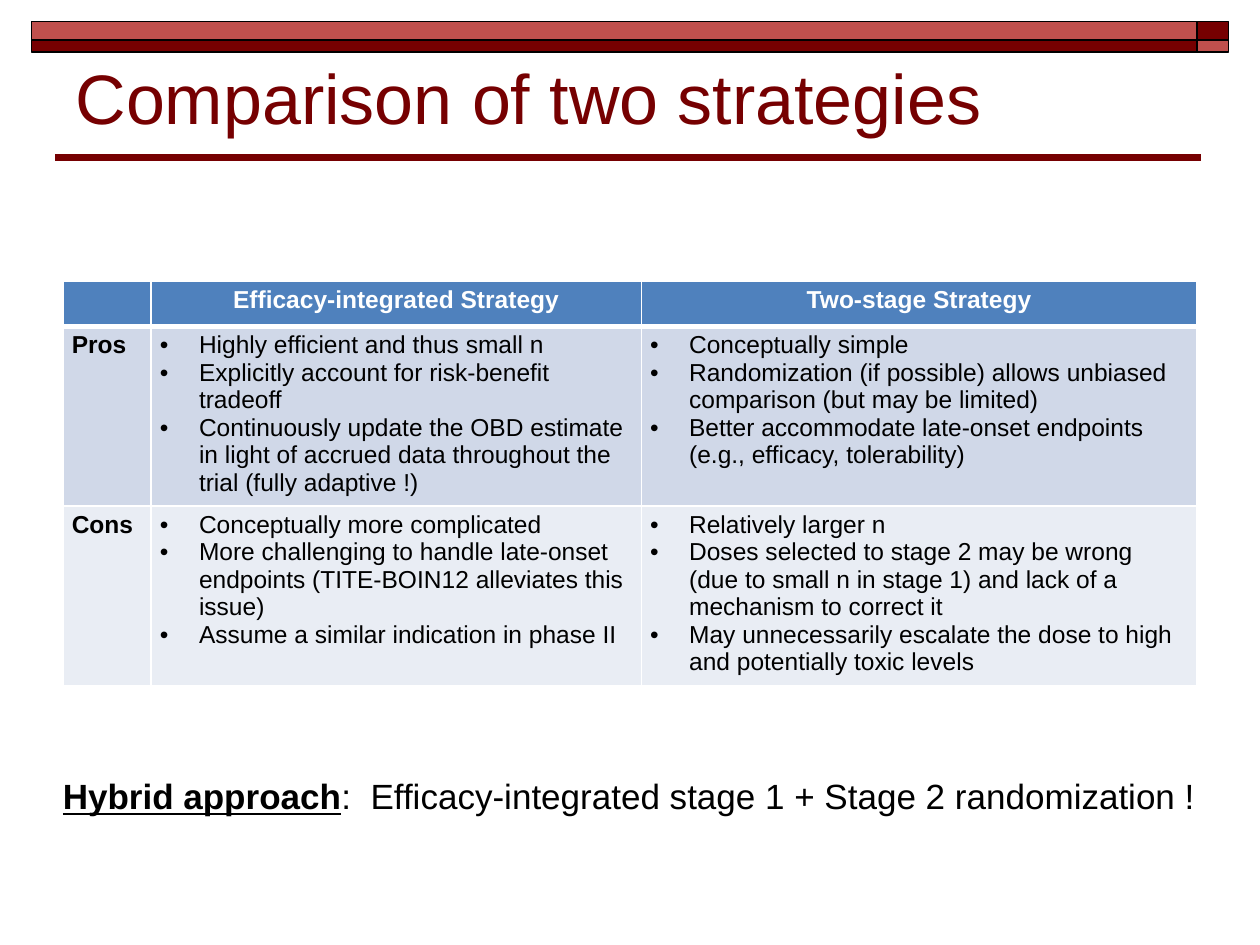
from lxml.etree import SubElement
from pptx import Presentation
from pptx.dml.color import RGBColor
from pptx.enum.shapes import MSO_CONNECTOR as Conn, MSO_SHAPE as Shape
from pptx.enum.text import MSO_ANCHOR as Anchor, PP_ALIGN as Align
from pptx.oxml.ns import qn
from pptx.util import Inches, Pt

MAROON = RGBColor(0x76, 0x00, 0x01)
RED = RGBColor(0xC0, 0x50, 0x4D)
BLUE = RGBColor(0x4F, 0x81, 0xBD)
PALE = RGBColor(0xD0, 0xD8, 0xE8)
LIGHT = RGBColor(0xE9, 0xED, 0xF4)
BLACK = RGBColor(0, 0, 0)
WHITE = RGBColor(255, 255, 255)

HEADS = ["", "Efficacy-integrated Strategy", "Two-stage Strategy"]
BODY = [
    ("Pros", PALE, [
        ["Highly efficient and thus small n",
         "Explicitly account for risk-benefit tradeoff",
         "Continuously update the OBD estimate in light of accrued data "
         "throughout the trial (fully adaptive !)"],
        ["Conceptually simple",
         "Randomization (if possible) allows unbiased comparison "
         "(but may be limited)",
         "Better accommodate late-onset endpoints "
         "(e.g., efficacy, tolerability)"],
    ]),
    ("Cons", LIGHT, [
        ["Conceptually more complicated",
         "More challenging to handle late-onset endpoints "
         "(TITE-BOIN12 alleviates this issue)",
         "Assume a similar indication in phase II"],
        ["Relatively larger n",
         "Doses selected to stage 2 may be wrong (due to small n in stage 1) "
         "and lack of a mechanism to correct it",
         "May unnecessarily escalate the dose to high and potentially "
         "toxic levels"],
    ]),
]


def add_run(para, text, size, color=BLACK, **form):
    run = para.add_run()
    run.text = text
    run.font.color.rgb = color
    for key, val in {"name": "Arial", "size": Pt(size), **form}.items():
        setattr(run.font, key, val)


def add_bullet(para):
    props = para._p.get_or_add_pPr()
    props.set("marL", str(Inches(0.31)))
    props.set("indent", str(-Inches(0.31)))
    SubElement(props, qn("a:buFont"), typeface="Arial")
    SubElement(props, qn("a:buChar"), char="•")


def add_edges(cell, top=1, base=1):
    """Draw white cell borders; they must come before the fill."""
    props = cell._tc.get_or_add_tcPr()
    for i, (side, wide) in enumerate(zip("LRTB", (1, 1, top, base))):
        line = SubElement(props, qn(f"a:ln{side}"), w=str(Pt(wide)))
        fill = SubElement(line, qn("a:solidFill"))
        SubElement(fill, qn("a:srgbClr"), val=str(WHITE))
        props.insert(i, line)


def add_banner(slide, left, top, width):
    """Two-tone checked strip with a rule below it."""
    end = 0.25
    tones = [MAROON, RED]
    rule = slide.shapes.add_connector(
        Conn.STRAIGHT, Inches(left + 0.19), Inches(top + 1.08),
        Inches(left + width - 0.22), Inches(top + 1.08))
    rule.line.color.rgb = MAROON
    rule.line.width = Pt(4.5)
    SubElement(rule._element.spPr, qn("a:effectLst"))
    for row, (down, high) in enumerate([(0, 0.15), (0.15, 0.09)]):
        for col, (over, wide) in enumerate([(0, width - end),
                                            (width - end, end)]):
            bar = slide.shapes.add_shape(
                Shape.RECTANGLE, Inches(left + over), Inches(top + down),
                Inches(wide), Inches(high))
            bar.shadow.inherit = False
            bar.fill.solid()
            bar.fill.fore_color.rgb = tones[(row + col + 1) % 2]
            bar.line.color.rgb = BLACK
            bar.line.width = Pt(1)


def add_title(slide, left, top, width, height):
    title = slide.shapes.title
    box = {"left": left, "top": top, "width": width, "height": height}
    for key, val in box.items():
        setattr(title, key, Inches(val))
    title.text_frame.vertical_anchor = Anchor.MIDDLE
    para = title.text_frame.paragraphs[0]
    para.alignment = Align.LEFT
    add_run(para, "Comparison of two strategies", 40, MAROON)


def fill_cell(cell, lines, color, ink=BLACK, bold=False, bullet=False,
              align=Align.LEFT):
    cell.fill.solid()
    cell.fill.fore_color.rgb = color
    cell.margin_left = cell.margin_right = Inches(0.07)
    cell.margin_top = cell.margin_bottom = Inches(0.04)
    frame = cell.text_frame
    for i, text in enumerate(lines):
        para = frame.add_paragraph() if i else frame.paragraphs[0]
        para.alignment = align
        if bullet:
            add_bullet(para)
        add_run(para, text, 14, ink, bold=bold)


def add_grid(slide, left, top, width, height):
    grid = slide.shapes.add_table(
        3, 3, Inches(left), Inches(top), Inches(width), Inches(height)).table
    head = 0.3
    for col, wide in zip(grid.columns, (0.7, 3.89, width - 4.59)):
        col.width = Inches(wide)
    for row, high in zip(grid.rows, (head, *[(height - head) / 2] * 2)):
        row.height = Inches(high)
    for col, text in enumerate(HEADS):
        cell = grid.cell(0, col)
        fill_cell(cell, [text], BLUE, WHITE, bold=True, align=Align.CENTER)
        add_edges(cell, base=3)
    for row, (name, color, lists) in enumerate(BODY, 1):
        fill_cell(grid.cell(row, 0), [name], color, bold=True)
        for col, lines in enumerate(lists, 1):
            fill_cell(grid.cell(row, col), lines, color, bullet=True)
        for cell in grid.rows[row].cells:
            add_edges(cell, top=3 if row == 1 else 1)


def add_note(slide, left, top, width, height):
    note = slide.shapes.add_textbox(
        Inches(left), Inches(top), Inches(width), Inches(height))
    note.text_frame.word_wrap = True
    para = note.text_frame.paragraphs[0]
    add_run(para, "Hybrid approach", 20, bold=True, underline=True)
    add_run(para, ":  Efficacy-integrated stage 1 + Stage 2 randomization !",
            20)


def main():
    deck = Presentation()
    deck.slide_width, deck.slide_height = Inches(10), Inches(7.5)
    slide = deck.slides.add_slide(deck.slide_layouts[5])
    add_banner(slide, 0.25, 0.17, 9.5)
    add_title(slide, 0.5, 0.27, 9, 0.99)
    add_grid(slide, 0.5, 2.23, 9, 3.15)
    add_note(slide, 0.4, 6.1, 9.2, 0.44)
    deck.save("out.pptx")


if __name__ == "__main__":
    main()
